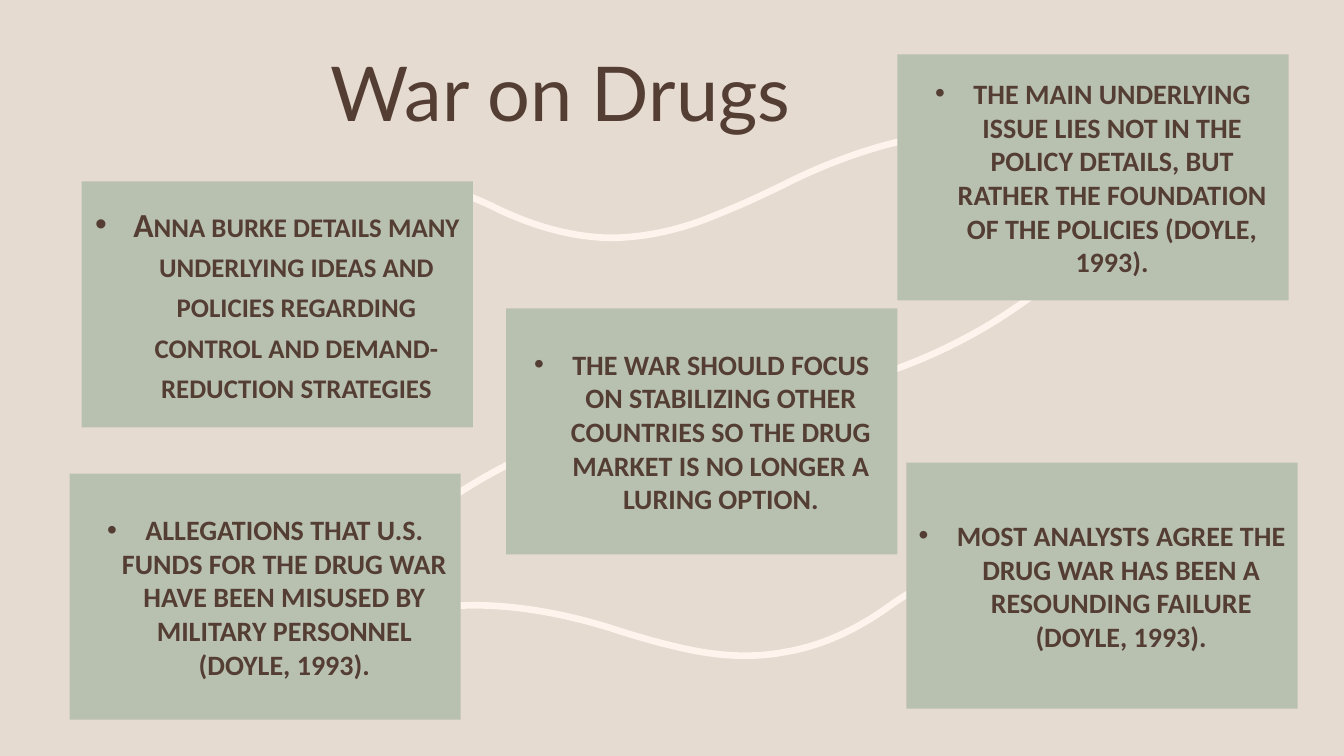
from lxml import etree
from pptx import Presentation
from pptx.dml.color import RGBColor
from pptx.enum import shapes, text
from pptx.oxml import ns
from pptx.util import Inches, Pt

COLORS = {"background": "E6DBD0", "card": "B8C0B0", "curve": "FEF3ED", "text": "543E34"}
CARD_WIDTH, CARD_HEIGHT = 3.88, 2.44

CARDS = [
    (0.81, 1.8, 24, "Anna burke details many underlying ideas and policies regarding "
                    "control and demand-reduction strategies"),
    (8.9, 0.54, 20, "THE MAIN UNDERLYING ISSUE LIES NOT IN THE POLICY DETAILS, BUT "
                    "RATHER THE FOUNDATION OF THE POLICIES (DOYLE, 1993)."),
    (5.02, 3.06, 20, "THE WAR SHOULD FOCUS ON STABILIZING OTHER COUNTRIES SO THE DRUG "
                     "MARKET IS NO LONGER A LURING OPTION."),
    (0.69, 4.7, 20, "ALLEGATIONS THAT U.S. FUNDS FOR THE DRUG WAR HAVE BEEN MISUSED BY "
                    "MILITARY PERSONNEL (DOYLE, 1993)."),
    (8.99, 4.59, 20, "MOST ANALYSTS AGREE THE DRUG WAR HAS BEEN A RESOUNDING FAILURE "
                     "(DOYLE, 1993)."),
]

CURVES = [
    [(8.33, 3.83), (9.13, 3.63), (9.85, 3.27), (10.47, 2.75)],
    [(5.84, 4.28), (5.09, 4.52), (4.45, 4.9), (3.89, 5.39)],
    [(3.07, 2.23), (3.5, 1.87), (3.98, 1.77), (4.49, 1.9),
     (4.66, 1.94), (4.81, 2.01), (4.97, 2.09),
     (5.3, 2.24), (5.65, 2.35), (6.04, 2.36),
     (6.37, 2.36), (6.7, 2.29), (7.01, 2.17),
     (7.37, 2.03), (7.57, 1.93), (7.78, 1.83),
     (8.01, 1.71), (9.4, 1.03), (10.27, 1.46)],
    [(9.2, 5.79), (9.04, 5.86), (8.91, 5.95), (8.77, 6.05),
     (8.48, 6.25), (8.15, 6.41), (7.78, 6.47),
     (7.46, 6.53), (7.14, 6.51), (6.81, 6.44),
     (6.45, 6.36), (6.24, 6.29), (6.02, 6.22),
     (5.78, 6.15), (4.34, 5.7), (3.47, 6.36)],
]


def color(name):
    return RGBColor.from_string(COLORS[name])


def bend_segments(curve):
    segments = list(curve._element.iter(ns.qn("a:lnTo")))
    for start in range(0, len(segments), 3):
        triple = segments[start:start + 3]
        bend = etree.Element(ns.qn("a:cubicBezTo"))
        triple[0].addprevious(bend)
        for segment in triple:
            bend.append(segment[0])
            segment.getparent().remove(segment)


def add_curve(slide, controls):
    start, *others = [(Inches(x), Inches(y)) for x, y in controls]
    builder = slide.shapes.build_freeform(*start)
    builder.add_line_segments(others, close=False)
    curve = builder.convert_to_shape()
    bend_segments(curve)
    curve.shadow.inherit = False
    curve.fill.background()
    curve.line.color.rgb = color("curve")
    curve.line.width = Pt(4.75)


def style_font(font, name, size, bold=False):
    font.name = name
    font.size = Pt(size)
    font.bold = bold
    font.color.rgb = color("text")


def add_title(slide, wording):
    title = slide.shapes.add_textbox(Inches(3.18), Inches(0), Inches(8.28), Inches(1.42))
    frame = title.text_frame
    frame.word_wrap = True
    frame.vertical_anchor = text.MSO_ANCHOR.BOTTOM
    heading = frame.paragraphs[0]
    heading.text = wording
    heading.line_spacing = 0.9
    style_font(heading.font, "Lato", 54)


def add_bullet(paragraph):
    properties = paragraph._p.get_or_add_pPr()
    properties.set("marL", str(Inches(0.38)))
    properties.set("indent", str(-Inches(0.38)))
    bullet_font = etree.Element(ns.qn("a:buFont"), typeface="Arial")
    bullet = etree.Element(ns.qn("a:buChar"), char="•")
    properties.insert(0, bullet_font)
    bullet_font.addnext(bullet)


def add_card(slide, left, top, size, wording):
    card = slide.shapes.add_shape(shapes.MSO_SHAPE.RECTANGLE, Inches(left), Inches(top),
                                  Inches(CARD_WIDTH), Inches(CARD_HEIGHT))
    card.shadow.inherit = False
    card.fill.solid()
    card.fill.fore_color.rgb = color("card")
    card.line.fill.background()
    frame = card.text_frame
    frame.word_wrap = True
    frame.vertical_anchor = text.MSO_ANCHOR.MIDDLE
    point = frame.paragraphs[0]
    point.text = wording
    point.alignment = text.PP_ALIGN.CENTER
    style_font(point.font, "Calibri", size, bold=True)
    add_bullet(point)
    if not wording.isupper():
        point.runs[0]._r.get_or_add_rPr().set("cap", "small")


def main():
    deck = Presentation()
    deck.slide_width, deck.slide_height = Inches(13.33), Inches(7.5)
    slide = deck.slides.add_slide(deck.slide_layouts[6])
    slide.background.fill.solid()
    slide.background.fill.fore_color.rgb = color("background")
    for controls in CURVES:
        add_curve(slide, controls)
    add_title(slide, "War on Drugs")
    for card in CARDS:
        add_card(slide, *card)
    deck.save("out.pptx")


if __name__ == "__main__":
    main()
